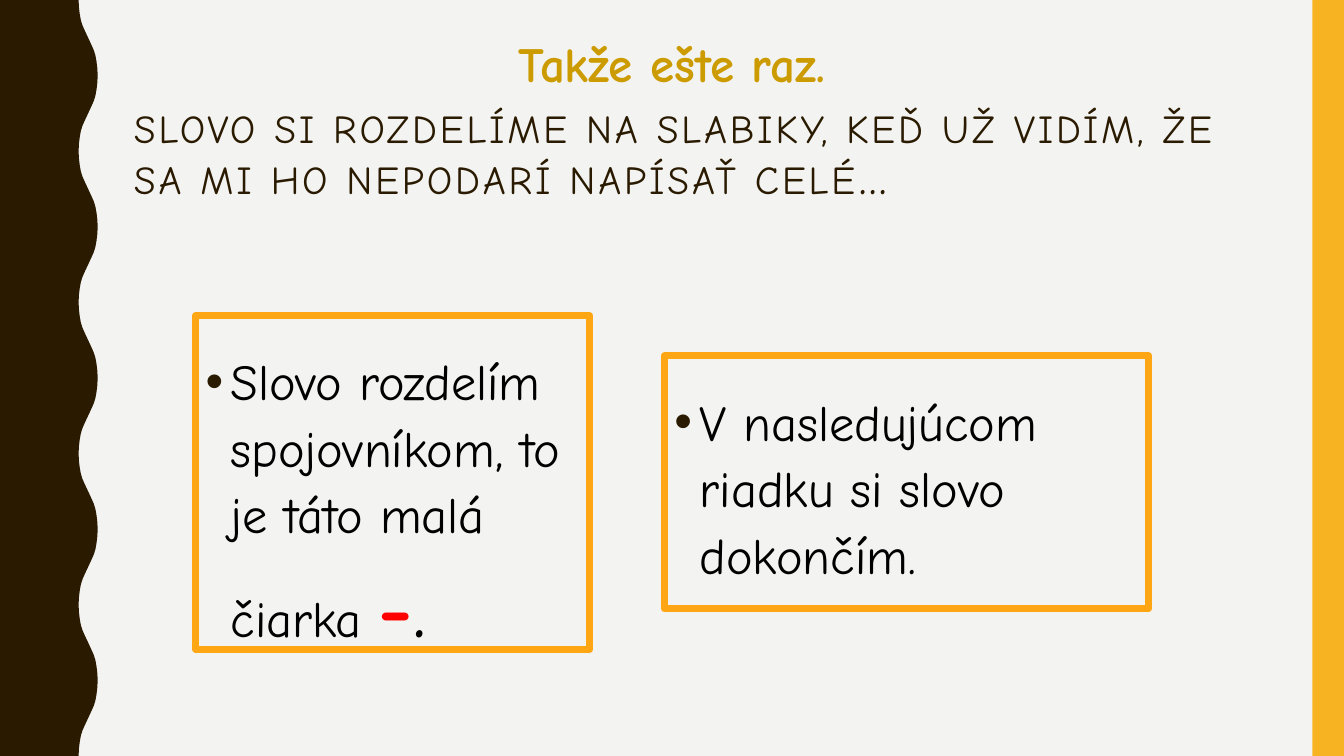
"""Build the slide on splitting a word with a hyphen."""
from lxml.etree import SubElement
from pptx import Presentation
from pptx.dml.color import RGBColor
from pptx.enum.shapes import MSO_SHAPE
from pptx.enum.text import MSO_ANCHOR, MSO_AUTO_SIZE, PP_ALIGN
from pptx.oxml.ns import qn
from pptx.util import Pt


def color(value):
    return RGBColor.from_string(value)


def add_run(paragraph, text, size, value, bold=False):
    run = paragraph.add_run()
    run.text = text
    run.font.name = "Comic Neue"
    run.font.size = Pt(size)
    run.font.bold = bold
    run.font.color.rgb = color(value)
    return run


presentation = Presentation()
presentation.slide_width = Pt(960)
presentation.slide_height = Pt(540)
slide = presentation.slides.add_slide(presentation.slide_layouts[3])
slide.background.fill.solid()
slide.background.fill.fore_color.rgb = color("F3F3F2")

quarter_wave = [(56.2, 0), (56.4, 5), (57, 10), (57.8, 14.4), (58.9, 18),
                (60.2, 21), (61.6, 24), (63, 27)]
half_wave = quarter_wave + [(126 - x, 54 - y) for x, y in reversed(quarter_wave[:-1])]
full_wave = half_wave + [(x, 108 - y) for x, y in reversed(half_wave[:-1])]
edge = [(Pt(x), Pt(108 * wave + y)) for wave in range(5) for x, y in full_wave]
builder = slide.shapes.build_freeform(0, 0, scale=1.0)
builder.add_line_segments(edge + [(0, Pt(540))], close=True)
wavy_band = builder.convert_to_shape()
side_bar = slide.shapes.add_shape(MSO_SHAPE.RECTANGLE, Pt(937.5), 0, Pt(22.5), Pt(540))
for shape, fill in [(wavy_band, "2A1A00"), (side_bar, "F8B323")]:
    shape.shadow.inherit = False
    shape.fill.solid()
    shape.fill.fore_color.rgb = color(fill)
    shape.line.fill.background()

title = slide.shapes.title
title.left, title.top, title.width, title.height = Pt(77.8), Pt(-3.5), Pt(804), Pt(73.5)
title.text_frame.auto_size = MSO_AUTO_SIZE.NONE
title.text_frame.vertical_anchor = MSO_ANCHOR.BOTTOM
paragraph = title.text_frame.paragraphs[0]
paragraph.alignment = PP_ALIGN.CENTER
paragraph.line_spacing = 0.9
add_run(paragraph, "Takže ešte raz.", 35.1, "CC9B00", True)

subtitle = slide.shapes.add_textbox(Pt(88.6), Pt(74.2), Pt(824.4), Pt(85.7))
subtitle.text_frame.word_wrap = True
paragraph = subtitle.text_frame.paragraphs[0]
paragraph.line_spacing = 0.9
for text, size in [("SLOVO SI ROZDELÍME NA SLABIKY, KEĎ UŽ VIDÍM, "
                    "ŽE SA MI HO NEPODARÍ NAPÍSAŤ CELÉ", 28.3), ("...", 35.1)]:
    run = add_run(paragraph, text, size, "2A1A00")
    run.font._element.set("spc", "200")

steps = [
    (1, (139.7, 225.4, 281.5, 238.3),
     [("Slovo rozdelím spojovníkom, to je táto malá čiarka ", 36, "000000", False),
      ("-", 60, "FF0000", True), (".", 60, "000000", False)]),
    (2, (474.5, 254.2, 346, 180.7),
     [("V nasledujúcom riadku si slovo dokončím.", 36, "000000", False)]),
]
for index, box, runs in steps:
    step = slide.placeholders[index]
    step.left, step.top, step.width, step.height = [Pt(length) for length in box]
    step.line.color.rgb = color("FFA615")
    step.line.width = Pt(5)
    frame = step.text_frame
    frame.auto_size = MSO_AUTO_SIZE.NONE
    frame.vertical_anchor = MSO_ANCHOR.TOP
    frame.margin_top = Pt(20.5)
    paragraph = frame.paragraphs[0]
    paragraph.line_spacing = 1.1
    paragraph.space_before = Pt(0)
    properties = paragraph._p.get_or_add_pPr()
    properties.set("marL", str(Pt(18)))
    properties.set("indent", str(Pt(-18)))
    bullet_color = SubElement(properties, qn("a:buClr"))
    SubElement(bullet_color, qn("a:srgbClr"), val="2A1A00")
    SubElement(properties, qn("a:buChar"), char="•")
    for run in runs:
        add_run(paragraph, *run)

presentation.save("out.pptx")
